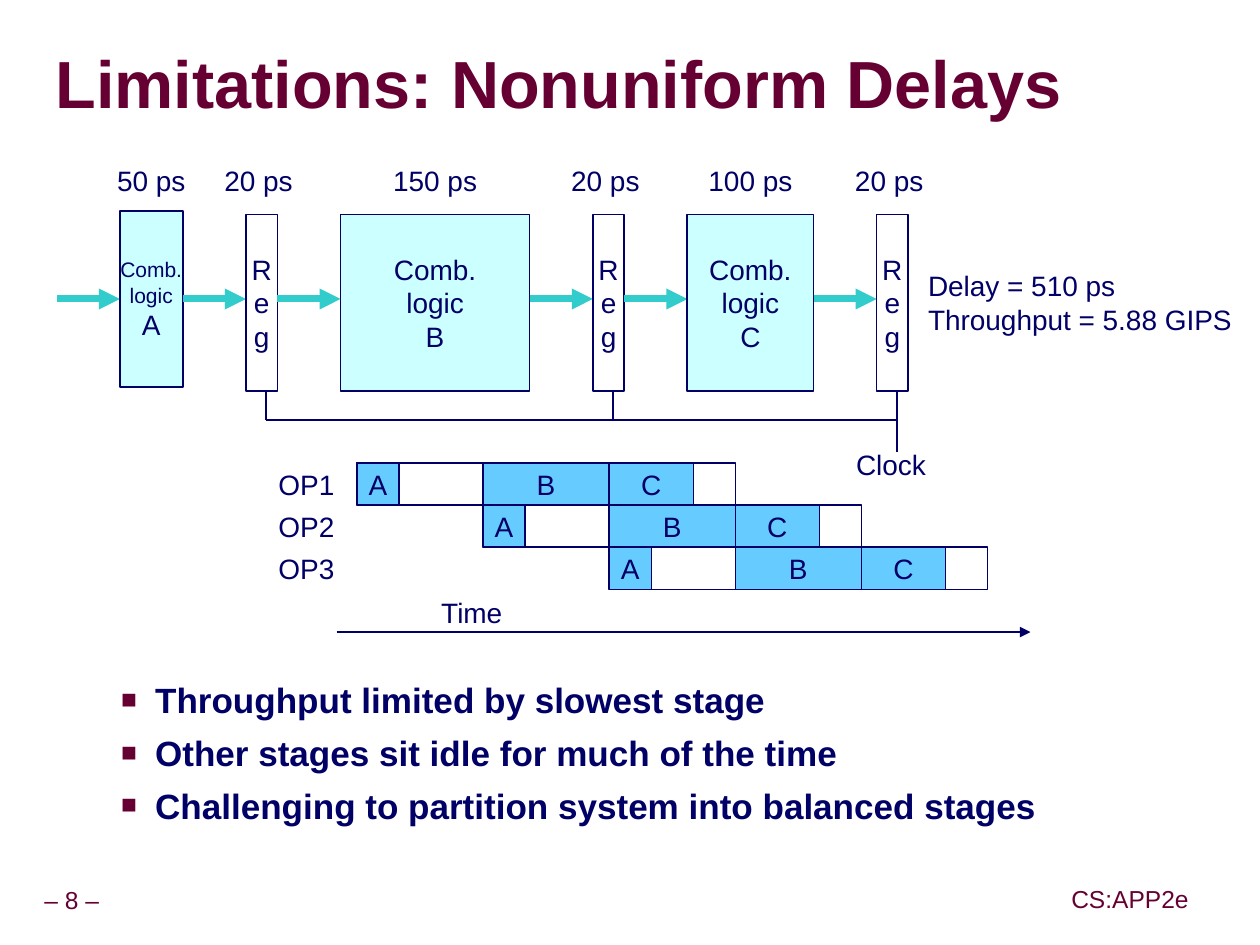
from lxml.etree import SubElement
from pptx import Presentation
from pptx.dml.color import RGBColor
from pptx.enum.shapes import MSO_CONNECTOR, MSO_SHAPE
from pptx.enum.text import MSO_ANCHOR, MSO_AUTO_SIZE, PP_ALIGN
from pptx.oxml.ns import qn
from pptx.util import Inches, Pt

NAVY, MAROON, TEAL = "000066", "660033", "33CCCC"
WHITE, PALE, SKY = "FFFFFF", "CCFFFF", "66CCFF"


def color(value):
    return RGBColor.from_string(value)


def add_xml(parent, tag, **attributes):
    return SubElement(parent, qn(tag), attributes)


def write(frame, lines, size=16, sizes=None, ink=NAVY, bold=False,
          align=PP_ALIGN.CENTER, anchor=MSO_ANCHOR.MIDDLE, wrap=False,
          spacing=None, before=0):
    """Fill a text frame, one paragraph per line."""
    frame.word_wrap = wrap
    frame.auto_size = MSO_AUTO_SIZE.NONE
    frame.vertical_anchor = anchor
    for index, line in enumerate(lines):
        paragraph = frame.paragraphs[0] if index == 0 else frame.add_paragraph()
        paragraph.alignment = align
        paragraph.line_spacing = spacing
        paragraph.space_before = Pt(before)
        run = paragraph.add_run()
        run.text = line
        run.font.name = "Arial"
        run.font.size = Pt(sizes[index] if sizes else size)
        run.font.bold = bold
        run.font.color.rgb = color(ink)


class SlideBuilder:
    def __init__(self, presentation):
        self.slide = presentation.slides.add_slide(presentation.slide_layouts[1])
        self.shapes = self.slide.shapes

    def place(self, shape, left, top, width, height):
        shape.left, shape.top = Inches(left), Inches(top)
        shape.width, shape.height = Inches(width), Inches(height)

    def title(self, text, *bounds):
        title = self.shapes.title
        self.place(title, *bounds)
        frame = title.text_frame
        frame.margin_left = frame.margin_right = 0
        frame.margin_top = frame.margin_bottom = 0
        write(frame, [text], size=38, ink=MAROON, bold=True,
              align=PP_ALIGN.LEFT, wrap=True, spacing=0.87)
        # Hard grey shadow behind the letters, before the font elements
        properties = frame.paragraphs[0].runs[0].font.fill._xPr
        effects = add_xml(properties, "a:effectLst")
        shadow = add_xml(effects, "a:outerShdw", dist="53882", dir="2700000", algn="ctr")
        add_xml(shadow, "a:srgbClr", val="999999")
        properties.find(qn("a:solidFill")).addnext(effects)

    def bullets(self, lines, *bounds):
        body = self.slide.placeholders[1]
        self.place(body, *bounds)
        write(body.text_frame, lines, size=20, bold=True, align=PP_ALIGN.LEFT,
              anchor=MSO_ANCHOR.TOP, wrap=True, before=6)
        for paragraph in body.text_frame.paragraphs:
            paragraph.level = 1
            properties = paragraph._p.get_or_add_pPr()
            properties.set("marL", str(Inches(0.81)))
            properties.set("indent", str(Inches(-0.27)))
            bullet_color = add_xml(properties, "a:buClr")
            add_xml(bullet_color, "a:srgbClr", val=MAROON)
            add_xml(properties, "a:buSzPct", val="75000")
            add_xml(properties, "a:buFont", typeface="Arial")
            add_xml(properties, "a:buChar", char="■")

    def label(self, lines, left, top, width, height=0.36, **text_format):
        box = self.shapes.add_textbox(
            Inches(left), Inches(top), Inches(width), Inches(height))
        write(box.text_frame, lines, **text_format)

    def box(self, left, top, width, height, fill=None, line=1.0, lines=(), **text_format):
        shape = self.shapes.add_shape(
            MSO_SHAPE.RECTANGLE, Inches(left), Inches(top), Inches(width), Inches(height))
        shape.shadow.inherit = False
        if fill:
            shape.fill.solid()
            shape.fill.fore_color.rgb = color(fill)
        else:
            shape.fill.background()
        shape.line.color.rgb = color(NAVY)
        shape.line.width = Pt(line)
        write(shape.text_frame, lines, **text_format)
        return shape

    def line(self, x1, y1, x2, y2, ink=NAVY, width=1, arrow=False):
        connector = self.shapes.add_connector(
            MSO_CONNECTOR.STRAIGHT, Inches(x1), Inches(y1), Inches(x2), Inches(y2))
        connector.line.color.rgb = color(ink)
        connector.line.width = Pt(width)
        if arrow:
            add_xml(connector.line._get_or_add_ln(), "a:tailEnd", type="triangle")
        add_xml(connector._element.spPr, "a:effectLst")
        return connector


def draw_pipeline(builder, stages):
    box_top, box_height, arrow_y, arrow_length = 1.7, 1.4, 2.37, 0.5
    register_width, clock_y = 0.25, 3.33
    clock_taps = []
    left = 0.45

    def flow(start):
        return builder.line(start, arrow_y, start + arrow_length, arrow_y,
                            ink=TEAL, width=4, arrow=True)

    def delay(center, picoseconds):
        builder.label([f"{picoseconds} ps"], center - 0.45, 1.25, 0.9)

    for name, picoseconds in stages:
        # Combinational logic; the narrow first stage has smaller text
        first = name == "A"
        width = picoseconds / 100
        inflow = flow(left)
        left += arrow_length
        width = 0.5 if first else width
        logic = builder.box(left, 1.67 if first else box_top, width, box_height, PALE,
                            lines=["Comb.", "logic", name],
                            sizes=[12, 12, 16] if first else None)
        delay(left + width / 2, picoseconds)
        left += width
        outflow = flow(left)
        if first:
            inflow.end_connect(logic, 1)
            outflow.begin_connect(logic, 3)
        left += arrow_length

        # Register
        builder.box(left, box_top, register_width, box_height, WHITE, lines="Reg")
        delay(left + 0.1, 20)
        clock_taps.append(left + 0.16)
        left += register_width

    # Clock wiring
    for tap in clock_taps:
        bottom = 3.58 if tap == clock_taps[-1] else clock_y
        builder.line(tap, box_top + box_height, tap, bottom)
    builder.line(clock_taps[0], clock_y, clock_taps[-1], clock_y)
    builder.label(["Clock"], 6.69, 3.5, 0.75)
    builder.label(["Delay = 510 ps", "Throughput = 5.88 GIPS"],
                  7.26, 2.08, 2.73, 0.63, align=PP_ALIGN.LEFT)


def draw_timing(builder, stages):
    start, top, row_height, slot = 2.83, 3.67, 1 / 3, 1
    longest = max(picoseconds for _, picoseconds in stages)
    for row in range(3):
        y = top + row * row_height
        builder.label([f"OP{row + 1}"], 1.83, y, 0.92, row_height, align=PP_ALIGN.RIGHT)
        for index, (name, picoseconds) in enumerate(stages):
            x = start + (row + index) * slot
            builder.box(x, y, slot * picoseconds / longest, row_height, SKY, 0.75, [name])
            if picoseconds < longest:
                builder.box(x, y, slot, row_height, line=0.75)

    # Time axis
    builder.label(["Time"], 3.4, 4.67, 0.69, align=PP_ALIGN.LEFT)
    builder.line(2.67, 5.01, 8.17, 5.01, arrow=True)


def main():
    presentation = Presentation()
    presentation.slide_width, presentation.slide_height = Inches(9.99), Inches(7.49)
    builder = SlideBuilder(presentation)
    stages = [("A", 50), ("B", 150), ("C", 100)]

    builder.title("Limitations: Nonuniform Delays", 0.44, 0.27, 9.52, 0.85)
    draw_pipeline(builder, stages)
    draw_timing(builder, stages)
    builder.bullets(["Throughput limited by slowest stage",
                     "Other stages sit idle for much of the time",
                     "Challenging to partition system into balanced stages"],
                    0.32, 5.33, 9.07, 1.7)

    # Footer
    builder.label(["– 8 –"], 0.24, 6.99, 0.66, 0.31, size=14, ink=MAROON, spacing=0.9)
    builder.label(["CS:APP2e"], 8.44, 6.98, 1.04, 0.31, size=14, ink=MAROON, spacing=0.9)
    presentation.save("out.pptx")


if __name__ == "__main__":
    main()
